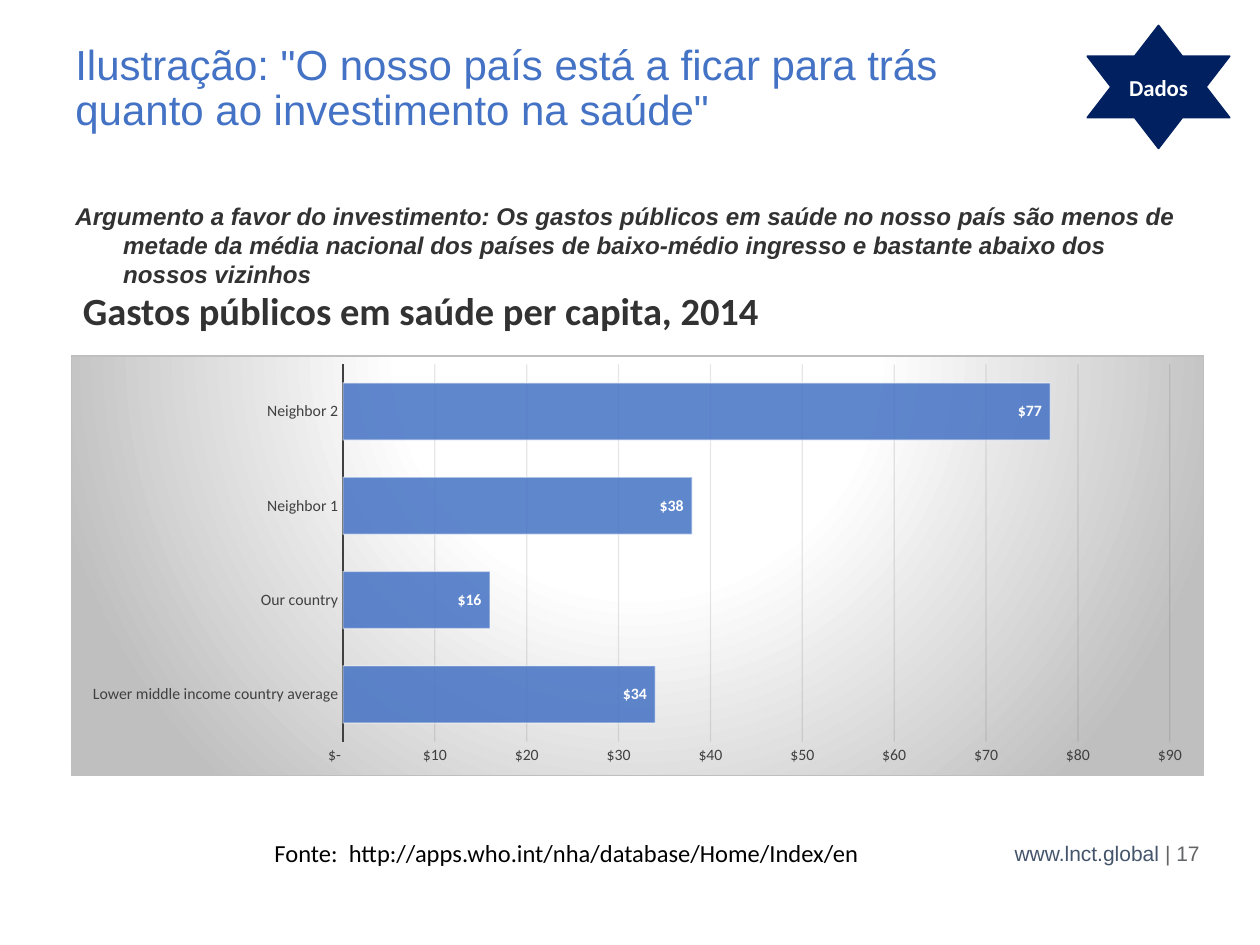
from lxml.etree import SubElement
from pptx import Presentation
from pptx.chart.data import CategoryChartData
from pptx.dml.color import RGBColor
from pptx.enum.chart import XL_CHART_TYPE, XL_LABEL_POSITION, XL_TICK_MARK
from pptx.enum.shapes import MSO_SHAPE
from pptx.enum.text import MSO_ANCHOR, PP_ALIGN
from pptx.oxml import parse_xml
from pptx.oxml.ns import nsdecls, qn
from pptx.util import Inches, Pt

WIDE, HIGH = 10, 7.5
HUES = {
    "blue": "4472C4", "navy": "002060", "slate": "44546A", "gray": "636466",
    "ink": "313231", "axis": "404040", "grid": "0D0D0D", "edge": "BFBFBF",
    "white": "FFFFFF", "black": "000000",
}
MONEY = '_("$"* #,##0_);_("$"* \\(#,##0\\);_("$"* "-"??_);_(@_)'
COSTS = {
    "Lower middle income country average": 34,
    "Our country": 16,
    "Neighbor 1": 38,
    "Neighbor 2": 77,
}


def hue(name):
    return RGBColor.from_string(HUES[name])


def area(left, top, width, height):
    """Turn shares of the slide into lengths."""
    return [Inches(share * side) for share, side in
            zip((left, top, width, height), (WIDE, HIGH, WIDE, HIGH))]


def style(font, size, color, name="Calibri", **more):
    font.color.rgb = hue(color)
    for key, value in {"size": Pt(size), "name": name, **more}.items():
        setattr(font, key, value)


def stroke(line, color, width):
    line.color.rgb = hue(color)
    line.width = Pt(width)


def fade(part, place, share):
    """Set the opacity, in percent, of the colour found at a place."""
    for color in part.xpath(place + "/a:solidFill/a:srgbClr"):
        SubElement(color, qn("a:alpha")).set("val", str(share * 1000))


def write(shape, runs, anchor=MSO_ANCHOR.TOP, hang=0, **form):
    frame = shape.text_frame
    frame.word_wrap = True
    frame.vertical_anchor = anchor
    para = frame.paragraphs[0]
    for key, value in form.items():
        setattr(para, key, value)
    if hang:
        props = para._p.get_or_add_pPr()
        props.set("marL", str(Inches(hang)))
        props.set("indent", str(-Inches(hang)))
    for text, look in runs:
        run = para.add_run()
        run.text = text
        style(run.font, **look)


def head(slide, box):
    look = {"size": 24, "color": "blue", "name": "Arial"}
    text = 'Ilustração: "O nosso país está a ficar para trás quanto ao investimento na saúde"'
    write(slide.shapes.add_textbox(*box), [(text, look)], line_spacing=0.9)


def badge(slide, box):
    star = slide.shapes.add_shape(MSO_SHAPE.STAR_6_POINT, *box)
    star.shadow.inherit = False
    star.fill.solid()
    star.fill.fore_color.rgb = hue("navy")
    stroke(star.line, "navy", 1)
    frame = star.text_frame
    for side in ("margin_left", "margin_right"):
        setattr(frame, side, 0)
    look = {"size": 13, "color": "white", "bold": True}
    write(star, [("Dados", look)], MSO_ANCHOR.MIDDLE, alignment=PP_ALIGN.CENTER)


def claim(slide, box):
    look = {"size": 13.8, "color": "ink", "name": "Arial", "bold": True, "italic": True}
    text = ("Argumento a favor do investimento: Os gastos públicos em saúde no nosso país "
            "são menos de metade da média nacional dos países de baixo-médio ingresso "
            "e bastante abaixo dos nossos vizinhos")
    write(slide.shapes.add_textbox(*box), [(text, look)], hang=0.38)


def label(slide, box):
    look = {"size": 22, "color": "ink", "bold": True}
    text = "Gastos públicos em saúde per capita, 2014"
    write(slide.shapes.add_textbox(*box), [(text, look)], hang=0.25, line_spacing=0.9)


def backdrop(chart):
    """Give the chart area a round gradient and a border."""
    stops = "".join(
        f'<a:gs pos="{pos * 1000}"><a:srgbClr val="{HUES[name]}"/></a:gs>'
        for pos, name in ((0, "white"), (39, "white"), (100, "edge")))
    chart._chartSpace.find(qn("c:chart")).addnext(parse_xml(
        f'<c:spPr {nsdecls("c", "a")}><a:gradFill><a:gsLst>{stops}</a:gsLst>'
        '<a:path path="circle"><a:fillToRect l="50000" t="-80000" r="50000" b="180000"/>'
        f'</a:path></a:gradFill><a:ln w="{Pt(0.75)}"><a:solidFill>'
        f'<a:srgbClr val="{HUES["edge"]}"/></a:solidFill></a:ln></c:spPr>'))


def frame_plot(chart):
    """Place the inner plot by shares of the chart."""
    plot = chart._chartSpace.xpath("c:chart/c:plotArea")[0]
    for old in plot.findall(qn("c:layout")):
        plot.remove(old)
    spots = "".join(f'<c:{key} val="{share}"/>' for key, share in
                    {"x": 0.24, "y": 0.02, "w": 0.73, "h": 0.9}.items())
    plot.insert(0, parse_xml(
        f'<c:layout {nsdecls("c")}><c:manualLayout><c:layoutTarget val="inner"/>'
        f'<c:xMode val="edge"/><c:yMode val="edge"/>{spots}</c:manualLayout></c:layout>'))


def bars(slide, box):
    data = CategoryChartData()
    data.categories = list(COSTS)
    data.add_series("Series 1", list(COSTS.values()))
    chart = slide.shapes.add_chart(XL_CHART_TYPE.BAR_CLUSTERED, *box, data).chart
    chart.has_legend = chart.has_title = False
    style(chart.font, 10, "black")
    backdrop(chart)
    frame_plot(chart)

    # Axes
    names, scale = chart.category_axis, chart.value_axis
    for axis in (names, scale):
        axis.major_tick_mark = axis.minor_tick_mark = XL_TICK_MARK.NONE
        style(axis.tick_labels.font, 9, "axis")
    stroke(names.format.line, "axis", 1.5)
    scale.format.line.fill.background()
    for key, value in {"minimum_scale": 0, "maximum_scale": 90, "major_unit": 10}.items():
        setattr(scale, key, value)
    stroke(scale.major_gridlines.format.line, "grid", 0.75)
    fade(scale._element, "c:majorGridlines/c:spPr/a:ln", 10)

    # Bars and their values
    plot = chart.plots[0]
    plot.gap_width = 65
    plot.vary_by_categories = False
    row = plot.series[0]
    row.format.fill.solid()
    row.format.fill.fore_color.rgb = hue("blue")
    stroke(row.format.line, "white", 0.75)
    fade(row._element, "c:spPr", 85)
    fade(row._element, "c:spPr/a:ln", 50)
    tags = row.data_labels
    tags.show_value = True
    tags.position = XL_LABEL_POSITION.INSIDE_END
    style(tags.font, 9, "white", bold=True)
    for part in (tags, scale.tick_labels):
        part.number_format = MONEY
        part.number_format_is_linked = False


def source(slide, box):
    text = "Fonte:  http://apps.who.int/nha/database/Home/Index/en"
    write(slide.shapes.add_textbox(*box), [(text, {"size": 14, "color": "black"})])


def foot(slide, box):
    look = {"size": 12, "name": "Arial"}
    runs = [("www.lnct.global ", {**look, "color": "slate"}),
            ("| 17", {**look, "color": "gray"})]
    write(slide.shapes.add_textbox(*box), runs, MSO_ANCHOR.MIDDLE, alignment=PP_ALIGN.RIGHT)


def main():
    deck = Presentation()
    deck.slide_width, deck.slide_height = Inches(WIDE), Inches(HIGH)
    slide = deck.slides.add_slide(deck.slide_layouts[6])
    head(slide, area(0.05, 0.04, 0.81, 0.17))
    bars(slide, area(0.056, 0.376, 0.9, 0.445))
    label(slide, area(0.056, 0.303, 0.9, 0.09))
    foot(slide, area(0.729, 0.876, 0.233, 0.053))
    source(slide, area(0.208, 0.88, 0.648, 0.045))
    claim(slide, area(0.05, 0.207, 0.9, 0.09))
    badge(slide, area(0.863, 0.027, 0.113, 0.13))
    deck.save("out.pptx")


if __name__ == "__main__":
    main()
